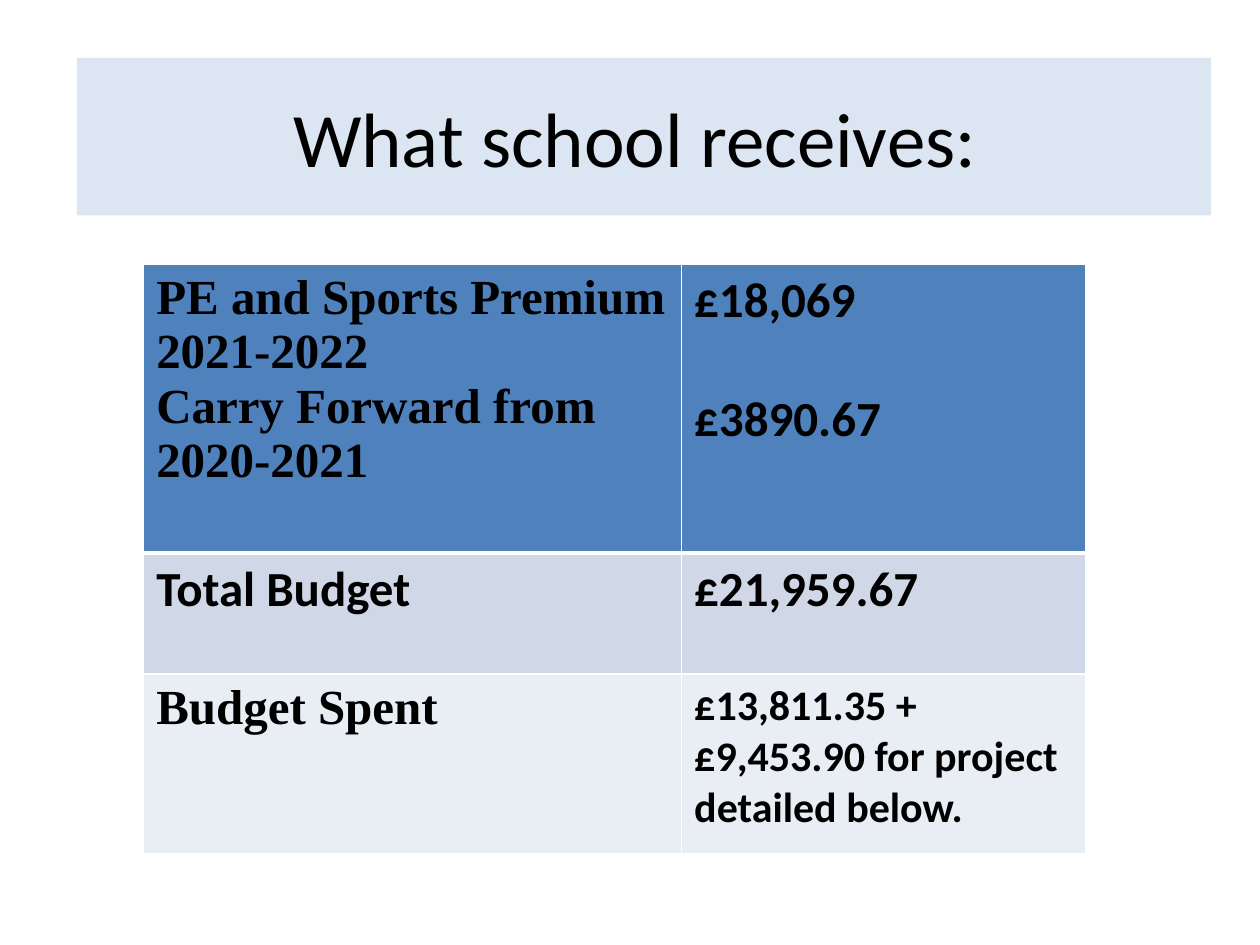
from dataclasses import dataclass

from lxml.etree import SubElement
from pptx import Presentation
from pptx.dml.color import RGBColor
from pptx.enum.text import MSO_ANCHOR, PP_ALIGN
from pptx.oxml.ns import qn
from pptx.util import Inches, Pt

SANS, SERIF = "Calibri", "Times New Roman"
BLACK, WHITE = "000000", "FFFFFF"


@dataclass
class CellText:
    lines: list[str]
    font: str = SANS
    size: int = 28
    gap: int = 0  # points between paragraphs


@dataclass
class BudgetRow:
    height: float
    fill: str
    label: CellText
    amount: CellText


ROWS = [
    BudgetRow(2.29, "4F81BD",
              CellText(["PE and Sports Premium", "2021-2022",
                        "Carry Forward from 2020-2021"], SERIF),
              CellText(["£18,069", "£3890.67"], gap=34)),
    BudgetRow(0.96, "D0D8E8",
              CellText(["Total Budget"]), CellText(["£21,959.67"])),
    BudgetRow(1.43, "E9EDF4",
              CellText(["Budget Spent"], SERIF),
              CellText(["£13,811.35 +", "£9,453.90 for project detailed below."], size=24)),
]
COL_WIDTHS = [4.27, 3.21]


def rgb(value: str) -> RGBColor:
    return RGBColor.from_string(value)


def set_fill(item, color: str) -> None:
    item.fill.solid()
    item.fill.fore_color.rgb = rgb(color)


def write(p, text: str, **formats) -> None:
    r = p.add_run()
    r.text = text
    r.font.color.rgb = rgb(BLACK)
    for name, value in formats.items():
        setattr(r.font, name, value)


def set_borders(cell, widths: dict[str, float]) -> None:
    tc_pr = cell._tc.get_or_add_tcPr()
    for side, width in widths.items():
        ln = SubElement(tc_pr, qn(f"a:ln{side}"), w=str(Pt(width)))
        SubElement(SubElement(ln, qn("a:solidFill")), qn("a:srgbClr"), val=WHITE)


def draw_cell(cell, content: CellText, fill: str, row: int) -> None:
    # The rule under the header row is thicker than the others
    set_borders(cell, {"L": 1, "R": 1, "T": 3 if row == 1 else 1, "B": 3 if row == 0 else 1})
    set_fill(cell, fill)
    tf = cell.text_frame
    for i, line in enumerate(content.lines):
        p = tf.add_paragraph() if i else tf.paragraphs[0]
        if i and content.gap:
            p.space_before = Pt(content.gap)
        write(p, line, name=content.font, size=Pt(content.size), bold=True)


def draw_table(slide) -> None:
    table = slide.shapes.add_table(
        len(ROWS), len(COL_WIDTHS), Inches(1.14), Inches(2.1),
        Inches(sum(COL_WIDTHS)), Inches(sum(row.height for row in ROWS))).table
    for col, width in zip(table.columns, COL_WIDTHS):
        col.width = Inches(width)
    for i, row in enumerate(ROWS):
        table.rows[i].height = Inches(row.height)
        for j, content in enumerate((row.label, row.amount)):
            draw_cell(table.cell(i, j), content, row.fill, i)


def draw_title(slide) -> None:
    sp = slide.shapes.title
    sp.left, sp.top, sp.width, sp.height = map(Inches, (0.61, 0.46, 9, 1.25))
    set_fill(sp, "DCE6F2")
    tf = sp.text_frame
    tf.vertical_anchor = MSO_ANCHOR.MIDDLE
    p = tf.paragraphs[0]
    p.alignment = PP_ALIGN.CENTER
    write(p, "What school receives: ", name=SANS, size=Pt(44))


def main() -> None:
    prs = Presentation()
    prs.slide_width, prs.slide_height = Inches(10), Inches(7.5)
    slide = prs.slides.add_slide(prs.slide_layouts[5])  # Title Only
    draw_title(slide)
    draw_table(slide)
    prs.save("out.pptx")


if __name__ == "__main__":
    main()
